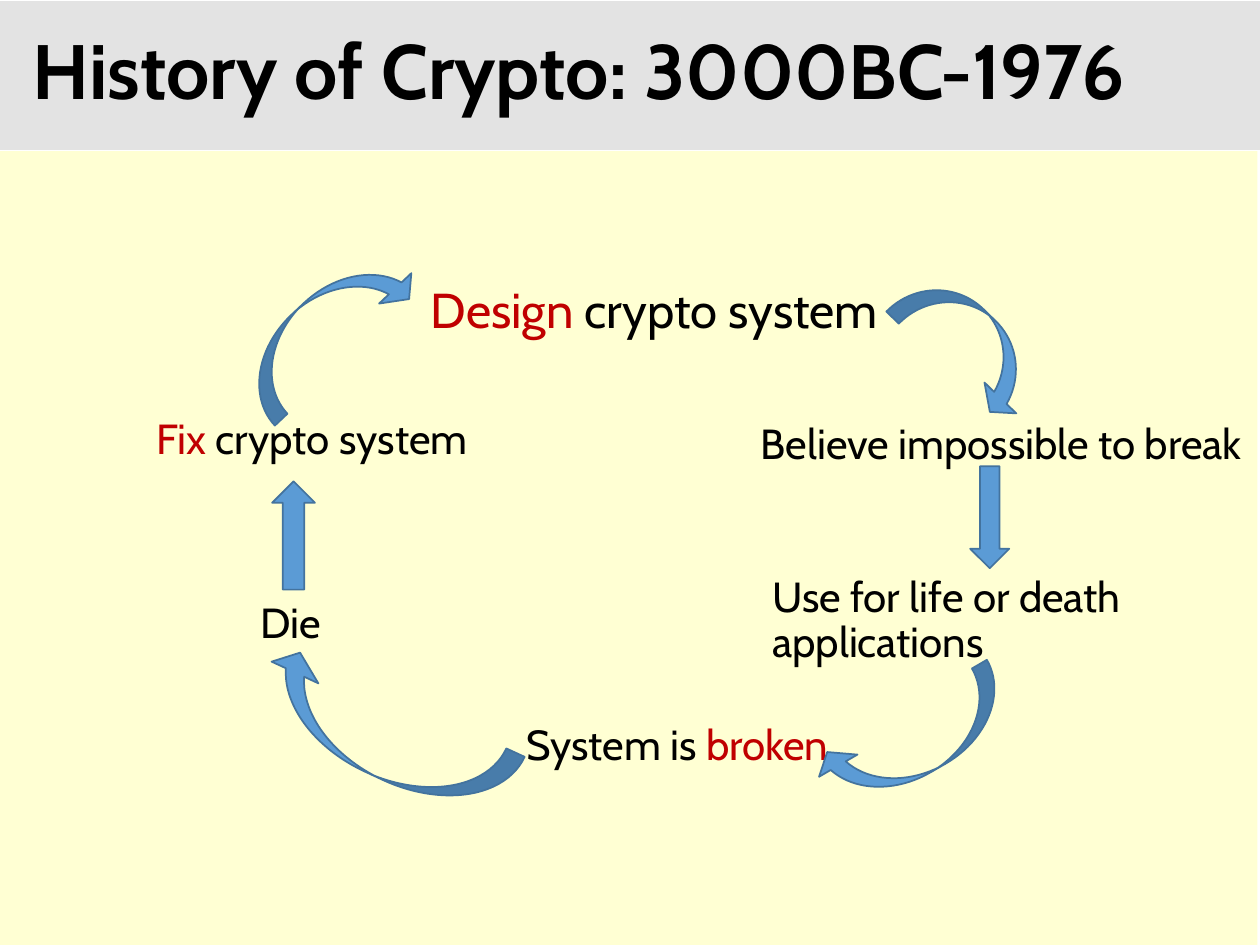
from lxml import etree
from pptx import Presentation, util as u
from pptx.dml.color import RGBColor
from pptx.enum import shapes, text
from pptx.oxml.ns import qn

FONT = "Cabin"
BLACK, RED = "000000", "C00000"
BLUE, DARK_BLUE = "5B9BD5", "43739E"
GREY, YELLOW = "BFBFBF", "FFFF99"


def paint(target, color):
    """Give a fill or a line's fill one solid colour."""
    target.solid()
    target.fore_color.rgb = RGBColor.from_string(color)


def place(shape, box):
    """Put a shape at (left, top, width, height) in inches."""
    shape.left, shape.top, shape.width, shape.height = map(u.Inches, box)


def add_band(page, box, color):
    """Add a translucent background band behind everything else."""
    band = page.shapes.add_shape(shapes.MSO_SHAPE.RECTANGLE, *map(u.Inches, box))
    band.shadow.inherit = False
    paint(band.fill, color)
    band.line.fill.background()
    tint = band._element.spPr.find(".//" + qn("a:srgbClr"))
    etree.SubElement(tint, qn("a:alpha")).set("val", "43000")
    band._element.getparent().insert(2, band._element)


def write(shape, spans, size, anchor, before=0, bold=False):
    """Fill a shape with one left-aligned paragraph of coloured spans."""
    frame = shape.text_frame
    frame.word_wrap = True
    frame.auto_size = text.MSO_AUTO_SIZE.NONE
    frame.vertical_anchor = anchor
    para = frame.paragraphs[0]
    para.alignment = text.PP_ALIGN.LEFT
    para.line_spacing = 0.9
    para.space_before = u.Pt(before)
    para.font.name, para.font.size, para.font.bold = FONT, u.Pt(size), bold
    for words, color in spans:
        span = para.add_run()
        span.text = words
        paint(span.font.fill, color)
    return para


def fill_title(page, box, words):
    """Place and format the slide title."""
    title = page.shapes.title
    place(title, box)
    write(title, [(words, BLACK)], 44, text.MSO_ANCHOR.MIDDLE, bold=True)


def fill_start(page, box, spans):
    """Use the body placeholder, without a bullet, as the first step."""
    body = page.placeholders[1]
    place(body, box)
    para = write(body, spans, 28, text.MSO_ANCHOR.TOP, before=10)
    props = para._p.get_or_add_pPr()
    props.set("marL", "0")
    props.set("indent", "0")
    bullet = etree.Element(qn("a:buNone"))
    props.find(qn("a:defRPr")).addprevious(bullet)


def add_step(page, box, spans):
    """Add the label of one later step in the cycle."""
    label = page.shapes.add_textbox(*map(u.Inches, box))
    write(label, spans, 24, text.MSO_ANCHOR.TOP, before=10)


def add_arrow(page, box, kind, angle, adjustments=()):
    """Add a rotated block arrow between two steps."""
    arrow = page.shapes.add_shape(kind, *map(u.Inches, box))
    arrow.shadow.inherit = False
    arrow.rotation = angle
    for index, value in enumerate(adjustments):
        arrow.adjustments[index] = value
    paint(arrow.fill, BLUE)
    paint(arrow.line.fill, DARK_BLUE)
    arrow.line.width = u.Pt(1)


def draw_cycle(page):
    """Lay out the design, break and fix cycle."""
    fill_start(page, (3.32, 2.22, 4.06, 0.89),
               [("Design", RED), (" crypto system", BLACK)])
    steps = [
        ((5.94, 3.31, 4.06, 0.89), [("Believe impossible to break", BLACK)]),
        ((6.03, 4.52, 4.18, 1.05), [("Use for life or death applications", BLACK)]),
        ((4.08, 5.7, 2.95, 0.71), [("System is ", BLACK), ("broken", RED)]),
        ((1.97, 4.73, 1.4, 0.64), [("Die", BLACK)]),
        ((1.14, 3.27, 3.14, 0.64), [("Fix", RED), (" crypto system", BLACK)]),
    ]
    for box, spans in steps:
        add_step(page, box, spans)

    curved_arrows = [
        ((7.04, 2.46, 1.32, 0.55), 44.1),
        ((6.44, 5.61, 1.64, 0.55), 150),
        ((1.96, 5.52, 2.17, 0.64), 204.9),
        ((1.77, 2.34, 1.64, 0.55), 316.7),
    ]
    for box, angle in curved_arrows:
        add_arrow(page, box, shapes.MSO_SHAPE.CURVED_DOWN_ARROW, angle,
                  (0.25, 0.64, 0.25))
    straight_arrows = [((2.16, 3.82, 0.34, 0.86), 0), ((7.7, 3.7, 0.31, 0.81), 180)]
    for box, angle in straight_arrows:
        add_arrow(page, box, shapes.MSO_SHAPE.UP_ARROW, angle)


def main():
    """Build and save the deck."""
    deck = Presentation()
    deck.slide_width, deck.slide_height = u.Inches(10), u.Inches(7.5)
    page = deck.slides.add_slide(deck.slide_layouts[1])
    add_band(page, (0, 1.2, 9.98, 6.44), YELLOW)
    add_band(page, (0, 0.01, 10, 1.18), GREY)
    fill_title(page, (0.16, 0, 9.84, 1.19), "History of Crypto: 3000BC-1976")
    draw_cycle(page)
    deck.save("out.pptx")


if __name__ == "__main__":
    main()
